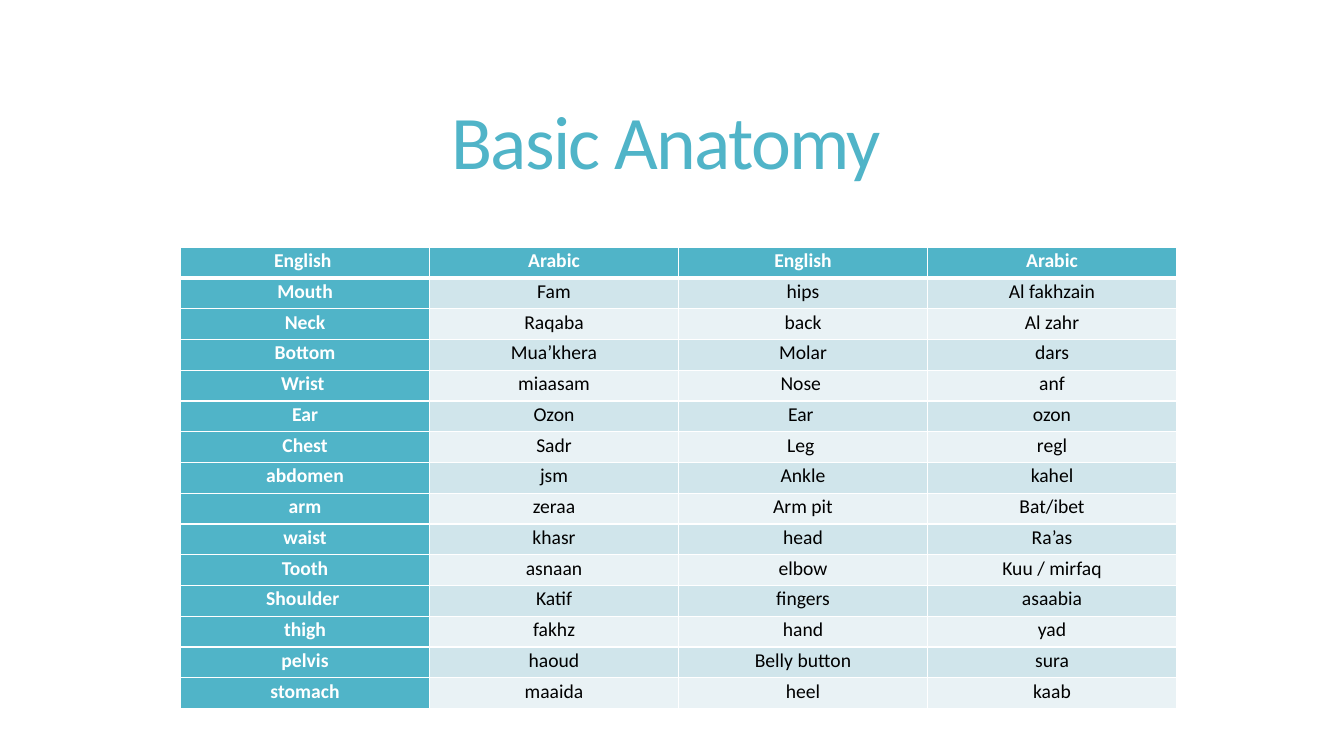
import dataclasses

import lxml.etree
import pptx
import pptx.dml.color
import pptx.enum.text
import pptx.oxml.ns
import pptx.util

Cm = pptx.util.Cm
Pt = pptx.util.Pt


@dataclasses.dataclass
class Theme:
    font: str = "Calibri"
    teal: str = "50B4C8"
    dark: str = "D0E5EB"
    light: str = "E9F2F5"
    white: str = "FFFFFF"
    black: str = "000000"
    head: int = 54
    body: int = 14


WORDS = [
    ("English ", "Arabic", "English", "Arabic"),
    ("Mouth", "Fam", "hips", "Al fakhzain"),
    ("Neck", "Raqaba", "back", "Al zahr"),
    ("Bottom", "Mua’khera", "Molar", "dars"),
    ("Wrist ", "miaasam", "Nose ", "anf"),
    ("Ear", "Ozon", "Ear ", "ozon"),
    ("Chest", "Sadr", "Leg ", "regl"),
    ("abdomen", "jsm", "Ankle", "kahel"),
    ("arm", "zeraa", "Arm pit", "Bat/ibet"),
    ("waist", "khasr", "head", "Ra’as"),
    ("Tooth", "asnaan", "elbow", "Kuu / mirfaq"),
    ("Shoulder ", "Katif", "fingers", "asaabia"),
    ("thigh", "fakhz", "hand", "yad"),
    ("pelvis", "haoud", "Belly button", "sura"),
    ("stomach", "maaida", "heel", "kaab"),
]


def paint(code):
    return pptx.dml.color.RGBColor.from_string(code)


def write(frame, text, *, font, size, color, bold=False, lead=1.0, track=0):
    """Put one centred line in a frame; track is letter spacing in points."""
    para = frame.paragraphs[0]
    para.alignment = pptx.enum.text.PP_ALIGN.CENTER
    para.line_spacing = lead
    run = para.add_run()
    run.text = text
    run.font.name = font
    run.font.size = Pt(size)
    run.font.bold = bold
    run.font.color.rgb = paint(color)
    if track:
        run.font._element.set("spc", str(round(track * 100)))


def edge(cell, side, color, width):
    """Draw one cell border; side is L, R, T or B, called in that order."""
    qn = pptx.oxml.ns.qn
    props = cell._tc.get_or_add_tcPr()
    line = lxml.etree.SubElement(props, qn(f"a:ln{side}"), w=str(Pt(width)))
    fill = lxml.etree.SubElement(line, qn("a:solidFill"))
    lxml.etree.SubElement(fill, qn("a:srgbClr"), val=color)


class Page:
    def __init__(self, slide, theme):
        self.slide = slide
        self.theme = theme

    def title(self, text, left, top, width, height):
        look = self.theme
        box = self.slide.shapes.add_textbox(Cm(left), Cm(top), Cm(width), Cm(height))
        frame = box.text_frame
        frame.word_wrap = True
        frame.vertical_anchor = pptx.enum.text.MSO_ANCHOR.MIDDLE
        write(frame, text, font=look.font, size=look.head, color=look.teal,
              lead=0.85, track=-1.2)

    def table(self, rows, left, top, width, height):
        shape = self.slide.shapes.add_table(
            len(rows), len(rows[0]), Cm(left), Cm(top), Cm(width), Cm(height))
        grid = shape.table
        grid.first_col = True
        for r, row in enumerate(rows):
            for c, text in enumerate(row):
                self.cell(grid.cell(r, c), text, r, c)

    def cell(self, cell, text, r, c):
        look = self.theme
        key = r == 0 or c == 0
        cell.margin_left = cell.margin_right = Cm(0.18)
        cell.margin_top = cell.margin_bottom = 0
        thick = {"T": r == 1, "B": r == 0}
        for side in "LRTB":
            edge(cell, side, look.white, 3 if thick.get(side) else 1)
        band = look.dark if r % 2 else look.light
        cell.fill.solid()
        cell.fill.fore_color.rgb = paint(look.teal if key else band)
        write(cell.text_frame, text, font=look.font, size=look.body,
              color=look.white if key else look.black, bold=key, lead=1.07)


def main():
    deck = pptx.Presentation()
    deck.slide_width = Cm(33.87)
    deck.slide_height = Cm(19.05)
    page = Page(deck.slides.add_slide(deck.slide_layouts[6]), Theme())
    page.title("Basic Anatomy", 1.83, 1.4, 29.92, 4.6)
    page.table(WORDS, 4.55, 6.23, 25.1, 11.63)
    deck.save("out.pptx")


if __name__ == "__main__":
    main()
